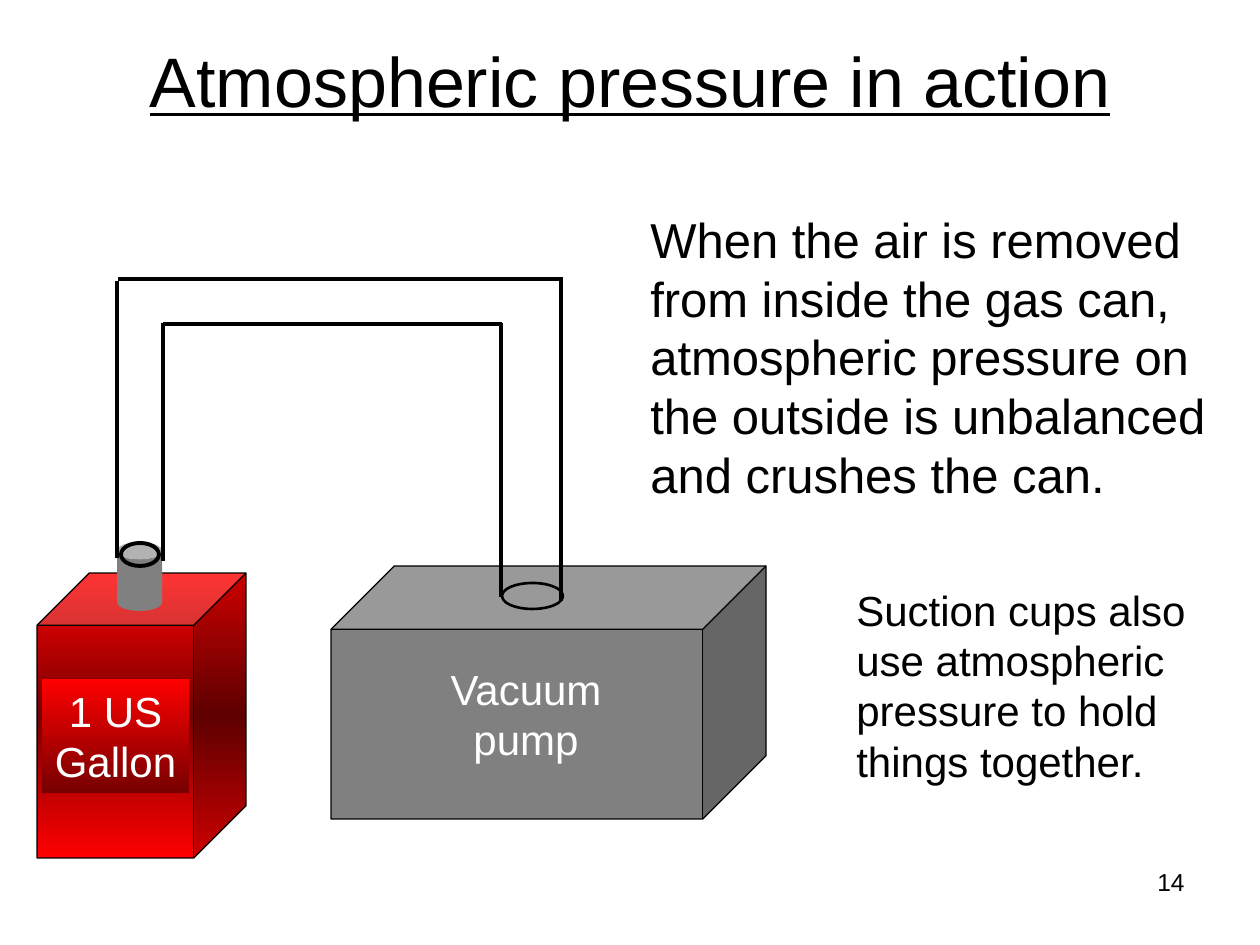
from copy import deepcopy

from lxml.etree import SubElement
from pptx import Presentation
from pptx.dml.color import RGBColor
from pptx.enum.shapes import MSO_CONNECTOR, MSO_SHAPE
from pptx.enum.text import MSO_ANCHOR, MSO_AUTO_SIZE, PP_ALIGN
from pptx.oxml.ns import qn
from pptx.util import Emu, Pt

SCALE = 914400 / 126
COLORS = {
    "black": "000000",
    "white": "FFFFFF",
    "gray": "808080",
    "red": "FF0000",
    "dark red": "760000",
}


def px(*lengths):
    return [Emu(round(length * SCALE)) for length in lengths]


def write(frame, text, size, color, align, wrap=False):
    frame.text = text
    frame.word_wrap = wrap
    for paragraph in frame.paragraphs:
        paragraph.alignment = align
        for run in paragraph.runs:
            run.font.name = "Arial"
            run.font.size = Pt(size)
            run.font.color.rgb = RGBColor.from_string(COLORS[color])


prs = Presentation()
prs.slide_width, prs.slide_height = px(1260, 945)
slide = prs.slides.add_slide(prs.slide_layouts[5])
shapes = slide.shapes

heading = shapes.title
heading.left, heading.top, heading.width, heading.height = px(0, 0, 1260, 158)
write(heading.text_frame, "Atmospheric pressure in action", 40, "black", PP_ALIGN.CENTER, True)
heading.text_frame.vertical_anchor = MSO_ANCHOR.MIDDLE
heading.text_frame.auto_size = MSO_AUTO_SIZE.NONE
heading.text_frame.paragraphs[0].runs[0].font.underline = True

explanation = (
    "When the air is removed\nfrom inside the gas can,\natmospheric pressure on\n"
    "the outside is unbalanced\nand crushes the can."
)
suction_note = "Suction cups also\nuse atmospheric\npressure to hold\nthings together."
for box, text, size, align, wrap in [
    ((638, 203, 582, 307), explanation, 28, PP_ALIGN.LEFT, False),
    ((844, 578, 355, 214), suction_note, 24, PP_ALIGN.LEFT, True),
    ((903, 861, 294, 66), "14", 14, PP_ALIGN.RIGHT, True),
]:
    note = shapes.add_textbox(*px(*box))
    write(note.text_frame, text, size, "black", align, wrap)

apparatus = [
    (MSO_SHAPE.CUBE, (331, 566, 435, 253), ["gray"], 0.75, 0.25, ""),
    (MSO_SHAPE.CUBE, (37, 573, 209, 285), ["red", "dark red", "red"], 0.75, 0.25, ""),
    (MSO_SHAPE.RECTANGLE, (42, 679, 147, 114), ["red", "dark red"], 0, None, "1 US\nGallon"),
    (MSO_SHAPE.CAN, (117, 542, 45, 69), ["gray"], 0, 0.384, ""),
    (MSO_SHAPE.RECTANGLE, (436, 657, 180, 113), ["gray"], 0, None, "Vacuum\npump"),
    (MSO_SHAPE.OVAL, (502, 583, 61, 26), [], 1.5, None, ""),
    (MSO_SHAPE.OVAL, (121, 543, 38, 23), [], 2.25, None, ""),
]
for kind, box, fills, outline, depth, label in apparatus:
    part = shapes.add_shape(kind, *px(*box))
    part.shadow.inherit = False
    if depth is not None:
        part.adjustments[0] = depth
    if not fills:
        part.fill.background()
    elif len(fills) == 1:
        part.fill.solid()
        part.fill.fore_color.rgb = RGBColor.from_string(COLORS[fills[0]])
    else:
        part.fill.gradient()
        part.fill.gradient_angle = 270
        stop_list = part._element.spPr.find(qn("a:gradFill")).find(qn("a:gsLst"))
        for _ in fills[2:]:
            stop_list.append(deepcopy(stop_list[-1]))
        for index, stop in enumerate(part.fill.gradient_stops):
            stop.position = index / (len(fills) - 1)
            stop.color.rgb = RGBColor.from_string(COLORS[fills[index]])
    if outline:
        part.line.color.rgb = RGBColor.from_string(COLORS["black"])
        part.line.width = Pt(outline)
    else:
        part.line.fill.background()
    if label:
        write(part.text_frame, label, 24, "white", PP_ALIGN.CENTER)
        part.text_frame.vertical_anchor = MSO_ANCHOR.TOP

hose_walls = [
    (163, 324, 502, 324),
    (118, 279, 563, 279),
    (561, 279, 561, 601),
    (501, 323, 501, 597),
    (117, 558, 117, 281),
    (163, 561, 163, 323),
]
for ends in hose_walls:
    wall = shapes.add_connector(MSO_CONNECTOR.STRAIGHT, *px(*ends))
    wall.line.color.rgb = RGBColor.from_string(COLORS["black"])
    wall.line.width = Pt(2.25)
    SubElement(wall._element.spPr, qn("a:effectLst"))

prs.save("out.pptx")
